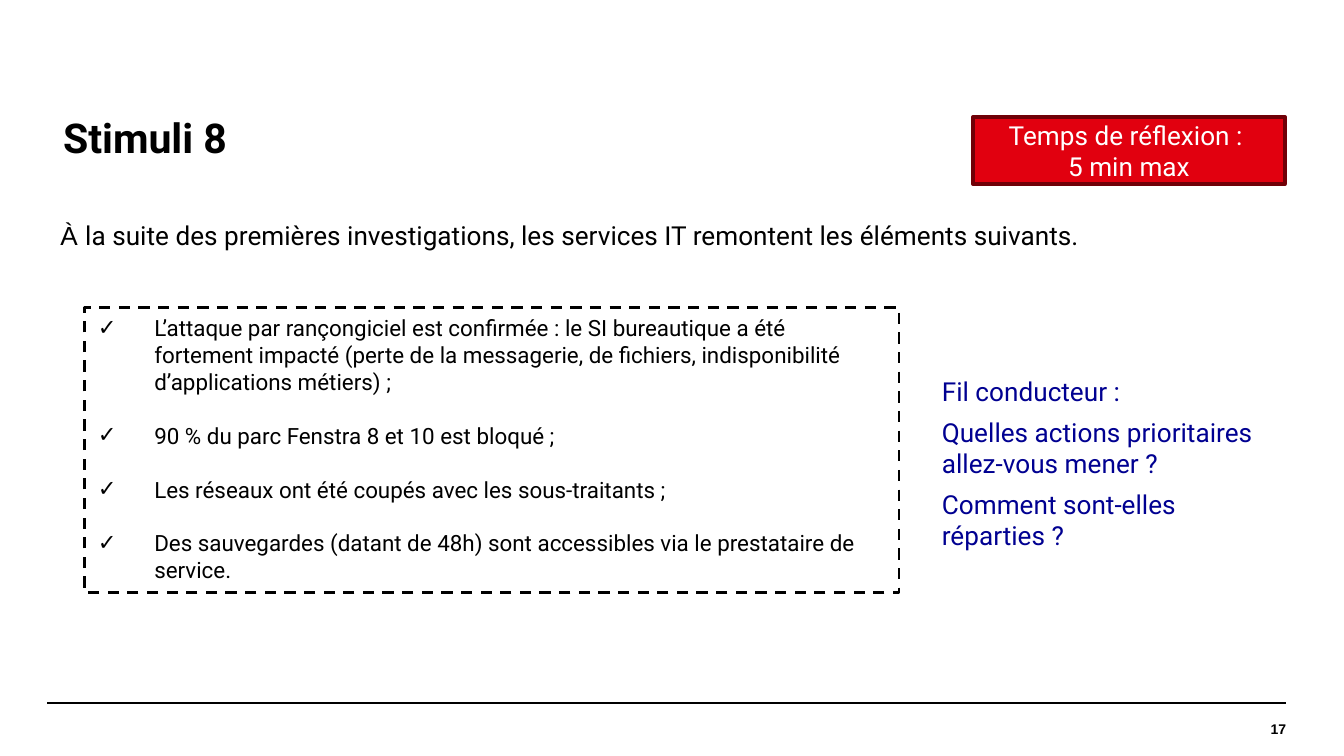
from pptx import Presentation
from pptx.dml.color import RGBColor
from pptx.enum.dml import MSO_LINE
from pptx.enum.shapes import MSO_CONNECTOR, MSO_SHAPE
from pptx.enum.text import MSO_ANCHOR, MSO_AUTO_SIZE, PP_ALIGN
from pptx.oxml.ns import qn
from pptx.util import Inches, Pt
from lxml import etree

TOP, MIDDLE = MSO_ANCHOR.TOP, MSO_ANCHOR.MIDDLE
LEFT, CENTER, RIGHT = PP_ALIGN.LEFT, PP_ALIGN.CENTER, PP_ALIGN.RIGHT
NO_FIT = MSO_AUTO_SIZE.NONE
DASH = MSO_LINE.DASH
RECTANGLE = MSO_SHAPE.RECTANGLE
STRAIGHT = MSO_CONNECTOR.STRAIGHT

BLACK, WHITE, BLUE = "000000", "FFFFFF", "000091"
RED, DARK_RED = "E1000F", "700007"
TITLE_ONLY = 5

FINDINGS = [
    "L’attaque par rançongiciel est confirmée : le SI bureautique a été fortement impacté "
    "(perte de la messagerie, de fichiers, indisponibilité d’applications métiers) ;",
    "90 % du parc Fenstra 8 et 10 est bloqué ;",
    "Les réseaux ont été coupés avec les sous-traitants ;",
    "Des sauvegardes (datant de 48h) sont accessibles via le prestataire de service.",
]
QUESTIONS = [
    "Fil conducteur :",
    "Quelles actions prioritaires allez-vous mener ?",
    "Comment sont-elles réparties ?",
]


def rgb(color):
    return RGBColor.from_string(color)


def set_box(box, left, top, width, height):
    box.left, box.top = Inches(left), Inches(top)
    box.width, box.height = Inches(width), Inches(height)


def set_frame(tf, anchor=TOP, inset=True):
    tf.word_wrap = True
    tf.auto_size = NO_FIT
    tf.vertical_anchor = anchor
    tf.margin_left = tf.margin_right = Inches(0.1 if inset else 0)
    tf.margin_top = tf.margin_bottom = Inches(0.05 if inset else 0)


def add_run(p, text, size, color=BLACK, font="Roboto", bold=False):
    r = p.add_run()
    r.text = text
    r.font.size = Pt(size)
    r.font.name = font
    r.font.bold = bold
    r.font.color.rgb = rgb(color)


def set_indent(p, margin, first=0, bullet=None):
    pPr = p._p.get_or_add_pPr()
    pPr.set("marL", str(Inches(margin)))
    pPr.set("indent", str(Inches(first)))
    if bullet:
        etree.SubElement(pPr, qn("a:buFont")).set("typeface", "Roboto")
        etree.SubElement(pPr, qn("a:buChar")).set("char", bullet)


def add_paragraphs(tf, texts, size, color=BLACK, align=LEFT, before=0, after=0,
                   margin=0, first=0, bullet=None):
    for i, text in enumerate(texts):
        p = tf.add_paragraph() if i else tf.paragraphs[0]
        set_indent(p, margin, first, bullet)
        p.alignment = align
        p.space_before = Pt(before if i else 0)
        p.space_after = Pt(after)
        add_run(p, text, size, color)


def add_text_box(s, box, anchor=TOP, inset=True):
    tf = s.shapes.add_textbox(*map(Inches, box)).text_frame
    set_frame(tf, anchor, inset)
    return tf


def add_rectangle(s, box, line, width, fill=None, dash=None, anchor=TOP):
    sp = s.shapes.add_shape(RECTANGLE, *map(Inches, box))
    sp.shadow.inherit = False
    if fill:
        sp.fill.solid()
        sp.fill.fore_color.rgb = rgb(fill)
    else:
        sp.fill.background()
    sp.line.color.rgb = rgb(line)
    sp.line.width = Pt(width)
    if dash:
        sp.line.dash_style = dash
    set_frame(sp.text_frame, anchor)
    return sp.text_frame


def add_rule(s, left, right, y):
    rule = s.shapes.add_connector(STRAIGHT, Inches(left), Inches(y), Inches(right), Inches(y))
    rule.line.color.rgb = rgb(BLACK)
    rule.line.width = Pt(0.8)
    etree.SubElement(rule._element.spPr, qn("a:effectLst"))


def set_title(s, text):
    title = s.shapes.title
    set_box(title, 0.35, 0.75, 9.21, 0.59)
    set_frame(title.text_frame, MIDDLE)
    p = title.text_frame.paragraphs[0]
    set_indent(p, 0.02)
    p.alignment = LEFT
    p.line_spacing = 0.9
    add_run(p, text, 22, bold=True)


def add_intro(s):
    p = add_text_box(s, (0.35, 1.63, 9.21, 3.39), inset=False).paragraphs[0]
    set_indent(p, 0.1)
    p.space_after = Pt(5)
    add_run(p, "À ", 14, font="Arial")
    add_run(p, "la suite des premières investigations, les services IT remontent "
               "les éléments suivants.", 14)


def add_page_number(s, number):
    p = add_text_box(s, (8.09, 5.23, 1.48, 0.39), MIDDLE, inset=False).paragraphs[0]
    p.alignment = RIGHT
    add_run(p, number, 7.5, font="Arial", bold=True)


def main():
    prs = Presentation()
    prs.slide_width = Inches(10)
    prs.slide_height = prs.slide_width * 9 // 16
    s = prs.slides.add_slide(prs.slide_layouts[TITLE_ONLY])

    add_rule(s, 0.35, 9.57, 5.23)
    add_intro(s)
    set_title(s, "Stimuli 8")
    add_page_number(s, "17")

    questions = add_text_box(s, (6.81, 1.87, 2.76, 3.15), MIDDLE)
    add_paragraphs(questions, QUESTIONS, 14, BLUE, after=5, margin=0.1)

    timer = add_rectangle(s, (7.24, 0.87, 2.32, 0.5), DARK_RED, 2, fill=RED, anchor=MIDDLE)
    add_paragraphs(timer, ["Temps de réflexion : ", "5 min max"], 14, WHITE, CENTER)

    findings = add_rectangle(s, (0.63, 2.29, 6.06, 2.12), BLACK, 1.5, dash=DASH)
    add_paragraphs(findings, FINDINGS, 12, before=14.4, margin=0.42, first=-0.42, bullet="✓")

    prs.save("out.pptx")


if __name__ == "__main__":
    main()
